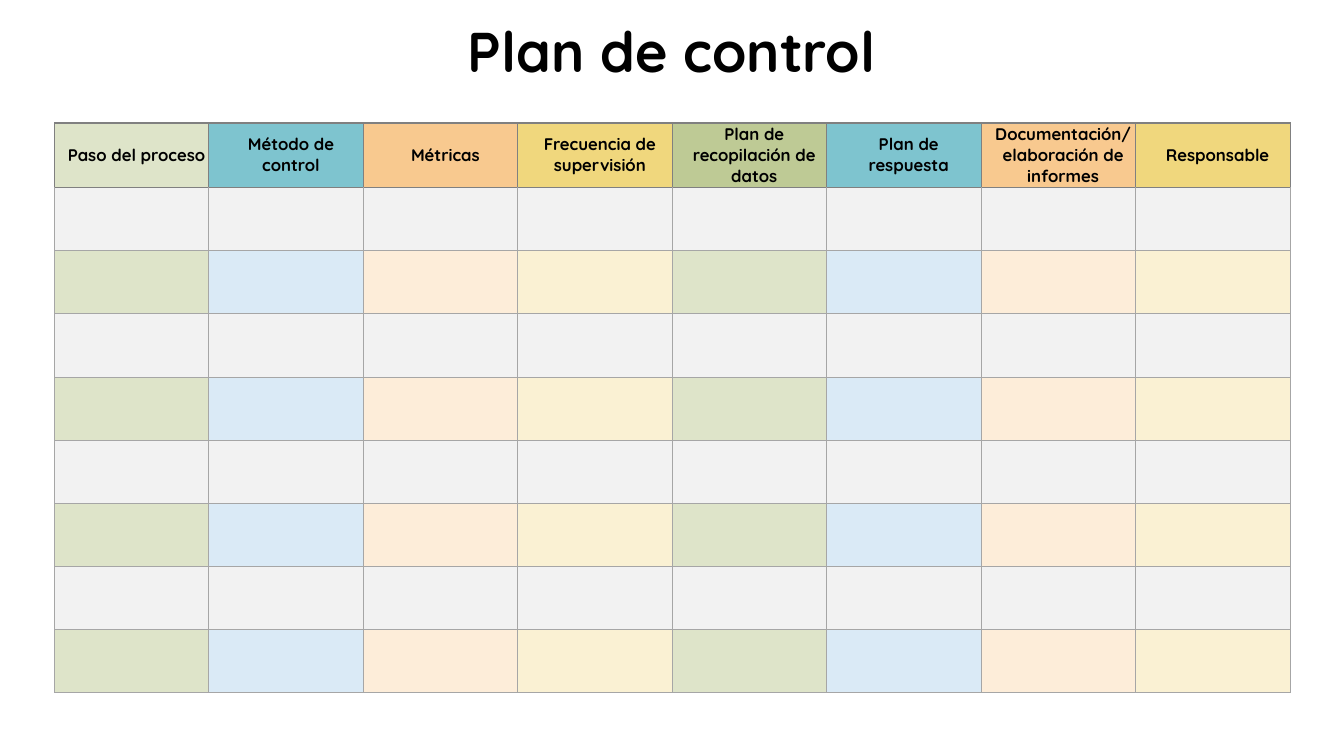
"""Build the control plan slide: a title above an empty plan table."""
from lxml.etree import SubElement
from pptx import Presentation
from pptx.dml.color import RGBColor
from pptx.enum.text import MSO_ANCHOR, PP_ALIGN
from pptx.oxml.ns import qn
from pptx.util import Cm, Pt

FONT = "Quicksand"
BLACK = RGBColor(0x00, 0x00, 0x00)
DARK_GRAY = RGBColor(0x80, 0x80, 0x80)
MID_GRAY = RGBColor(0xA6, 0xA6, 0xA6)
LIGHT_GRAY = RGBColor(0xF2, 0xF2, 0xF2)
GREEN = RGBColor(0xBE, 0xCA, 0x95)
TEAL = RGBColor(0x7E, 0xC4, 0xCF)
ORANGE = RGBColor(0xF8, 0xC9, 0x8F)
YELLOW = RGBColor(0xF0, 0xD7, 0x7D)
PALE_GREEN = RGBColor(0xDE, 0xE4, 0xC9)
PALE_BLUE = RGBColor(0xDA, 0xEA, 0xF6)
PALE_ORANGE = RGBColor(0xFD, 0xED, 0xD9)
PALE_YELLOW = RGBColor(0xFA, 0xF1, 0xD3)

TITLE = "Plan de control"
HEADERS = [
    ("Paso del proceso", PALE_GREEN),
    ("Método de control", TEAL),
    ("Métricas", ORANGE),
    ("Frecuencia de supervisión", YELLOW),
    ("Plan de recopilación de datos", GREEN),
    ("Plan de respuesta", TEAL),
    ("Documentación/elaboración de informes", ORANGE),
    ("Responsable", YELLOW),
]
BAND = [PALE_GREEN, PALE_BLUE, PALE_ORANGE, PALE_YELLOW]
BODY_ROWS = 8

LEFT, TOP, WIDTH = Cm(1.37), Cm(3.1), Cm(31.14)
HEADER_HEIGHT, BODY_HEIGHT = Cm(1.62), Cm(12.74)


def write(tf, text, size):
    p = tf.paragraphs[0]
    p.text = text
    p.alignment = PP_ALIGN.CENTER
    p.font.name = FONT
    p.font.size = Pt(size)
    p.font.bold = True
    p.font.color.rgb = BLACK
    return p


def style_cell(cell, fill, color, top_color, top_width=0.5):
    tc_pr = cell._tc.get_or_add_tcPr()
    for side in "LRTB":
        width = top_width if side == "T" else 0.5
        line = SubElement(tc_pr, qn(f"a:ln{side}"), w=str(Pt(width)))
        solid = SubElement(line, qn("a:solidFill"))
        side_color = top_color if side == "T" else color
        SubElement(solid, qn("a:srgbClr"), val=str(side_color))
    cell.fill.solid()
    cell.fill.fore_color.rgb = fill


def add_title(s):
    tf = s.shapes.add_textbox(Cm(6.63), 0, Cm(20.6), Cm(2.74)).text_frame
    tf.word_wrap = True
    tf.vertical_anchor = MSO_ANCHOR.MIDDLE
    write(tf, TITLE, 40).line_spacing = 0.9


def add_plan(s):
    frame = s.shapes.add_table(BODY_ROWS + 1, len(HEADERS), LEFT, TOP,
                               WIDTH, HEADER_HEIGHT + BODY_HEIGHT)
    table = frame.table
    table.first_row = table.horz_banding = False
    for row in table.rows:
        row.height = BODY_HEIGHT // BODY_ROWS
    table.rows[0].height = HEADER_HEIGHT

    for col, (text, fill) in enumerate(HEADERS):
        table.columns[col].width = WIDTH // len(HEADERS)
        cell = table.cell(0, col)
        cell.margin_left = Cm(0.25)
        cell.margin_right = cell.margin_top = cell.margin_bottom = 0
        cell.vertical_anchor = MSO_ANCHOR.MIDDLE
        write(cell.text_frame, text, 12)
        style_cell(cell, fill, DARK_GRAY, DARK_GRAY, 1.5)
        for row in range(1, BODY_ROWS + 1):
            band = LIGHT_GRAY if row % 2 else BAND[col % len(BAND)]
            top_color = DARK_GRAY if row == 1 else MID_GRAY
            style_cell(table.cell(row, col), band, MID_GRAY, top_color)


def main():
    prs = Presentation()
    prs.slide_width, prs.slide_height = Cm(33.87), Cm(19.05)
    s = prs.slides.add_slide(prs.slide_layouts[6])
    add_plan(s)
    add_title(s)
    prs.save("out.pptx")


if __name__ == "__main__":
    main()
